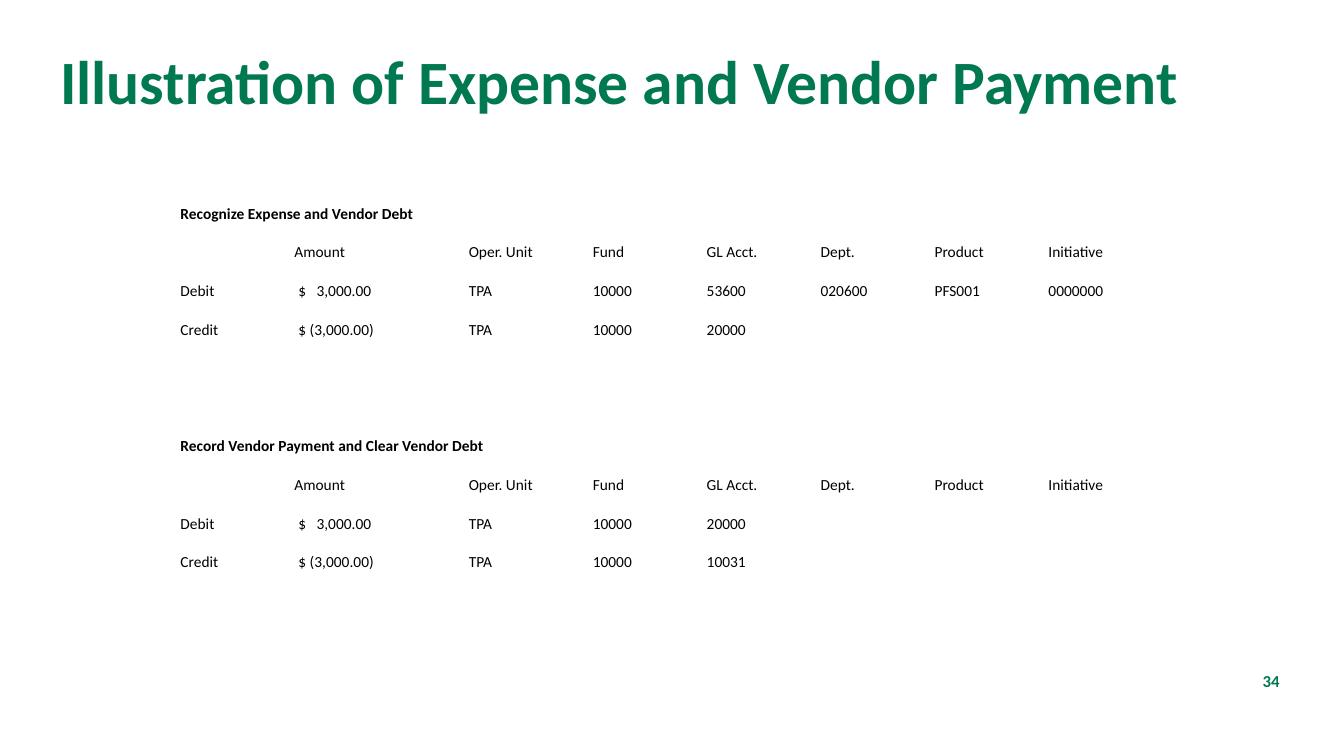
from pptx import Presentation, util as u
from pptx.dml.color import RGBColor
from pptx.enum import text
from lxml import etree

WIDE, HIGH = 13.33, 7.5
GREEN, BLACK = "007851", "000000"
TITLE = "Illustration of Expense and Vendor Payment"
PAGE = "34"
HEADS = ["", "Amount", "", "Oper. Unit", "Fund", "GL Acct.", "Dept.", "Product", "Initiative"]
DEBIT = ["Debit", "$\t3,000.00", "", "TPA", "10000"]
CREDIT = ["Credit", "$ (3,000.00)", "", "TPA", "10000"]
BLOCKS = [
    (0, 4, "Recognize Expense and Vendor Debt",
     [HEADS, DEBIT + ["53600", "020600", "PFS001", "0000000"], CREDIT + ["20000"]]),
    (6, 6, "Record Vendor Payment and Clear Vendor Debt",
     [HEADS, DEBIT + ["20000"], CREDIT + ["10031"]]),
]
COLS = [1.13, 1.39, 0.34, 1.23] + [1.13] * 5
ROWS, STEP = 10, 0.385
LEFT, TOP = 1.78, 1.83
TAB = 0.18


def color(code):
    return RGBColor.from_string(code)


def write(para, words, size, code, bold):
    run = para.add_run()
    run.text = words
    font = run.font
    font.name, font.size, font.bold = "Calibri", u.Pt(size), bold
    font.color.rgb = color(code)


def label(slide, box, words, size, align, anchor):
    frame = slide.shapes.add_textbox(*map(u.Inches, box)).text_frame
    frame.word_wrap = True
    frame.vertical_anchor = anchor
    para = frame.paragraphs[0]
    para.alignment = align
    write(para, words, size, GREEN, True)
    return para


def fill(cell, words, bold=False):
    para = cell.text_frame.paragraphs[0]
    if words.startswith("$"):
        cell.margin_left = u.Inches(0.05)
    if "\t" in words:
        props = para._p.get_or_add_pPr()
        tabs = etree.SubElement(props, props.tag.replace("pPr", "tabLst"))
        stop = etree.SubElement(tabs, props.tag.replace("pPr", "tab"))
        stop.set("pos", str(u.Inches(TAB)))
        stop.set("algn", "l")
    write(para, words, 11, BLACK, bold)


def ledger(slide):
    frame = slide.shapes.add_table(ROWS, len(COLS), *map(
        u.Inches, (LEFT, TOP, sum(COLS), ROWS * STEP)))
    table = frame.table
    table.first_row = table.horz_banding = False
    for col, width in zip(table.columns, COLS):
        col.width = u.Inches(width)
    for row in table.rows:
        row.height = u.Inches(STEP)
    for cell in table.iter_cells():
        cell.fill.background()
        cell.vertical_anchor = text.MSO_ANCHOR.BOTTOM
        cell.margin_left = cell.margin_right = cell.margin_top = u.Inches(0.01)
        cell.margin_bottom = 0
    for start, span, name, lines in BLOCKS:
        table.cell(start, 0).merge(table.cell(start, span - 1))
        fill(table.cell(start, 0), name, True)
        for r, line in enumerate(lines, start + 1):
            for c, words in enumerate(line):
                if words:
                    fill(table.cell(r, c), words)


def main():
    deck = Presentation()
    deck.slide_width, deck.slide_height = u.Inches(WIDE), u.Inches(HIGH)
    slide = deck.slides.add_slide(deck.slide_layouts[6])
    head = label(slide, (0.5, 0.46, 12.29, 0.85), TITLE, 44,
                 text.PP_ALIGN.LEFT, text.MSO_ANCHOR.TOP)
    head.line_spacing = 0.9
    label(slide, (11.86, 6.61, 0.93, 0.29), PAGE, 12,
          text.PP_ALIGN.RIGHT, text.MSO_ANCHOR.MIDDLE)
    ledger(slide)
    deck.save("out.pptx")


if __name__ == "__main__":
    main()
